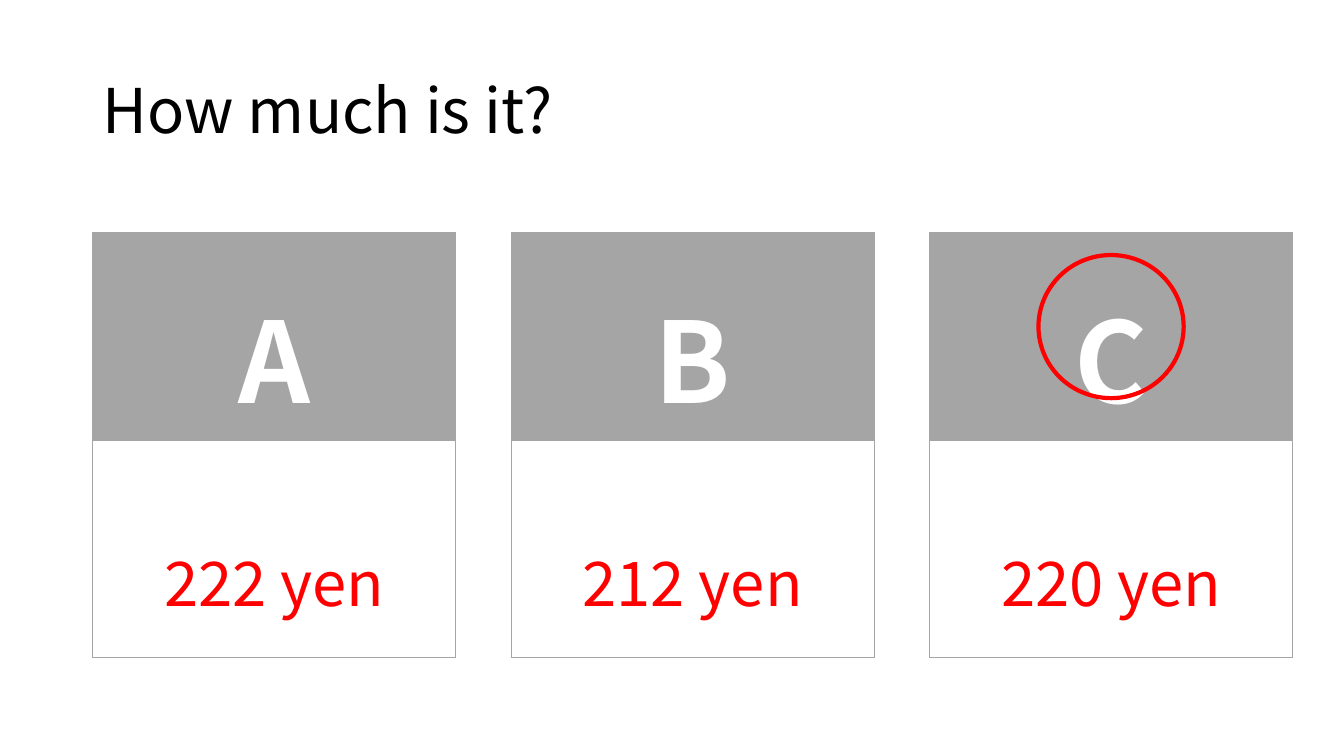
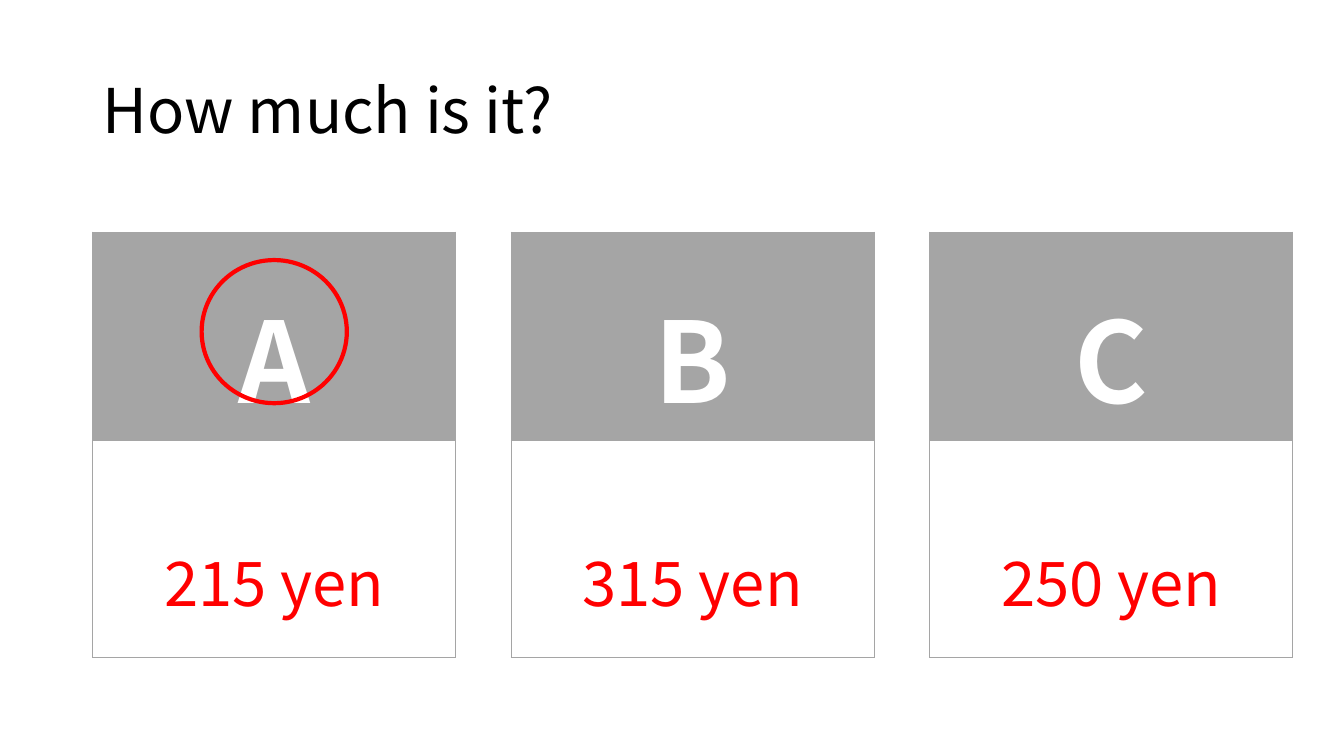
from lxml.etree import SubElement
from pptx import Presentation
from pptx.dml.color import RGBColor
from pptx.enum.shapes import MSO_SHAPE
from pptx.enum.text import MSO_ANCHOR, PP_ALIGN
from pptx.oxml.ns import qn
from pptx.util import Inches, Pt

BLACK = RGBColor(0x00, 0x00, 0x00)
WHITE = RGBColor(0xFF, 0xFF, 0xFF)
GRAY = RGBColor(0xA5, 0xA5, 0xA5)
RED = RGBColor(0xFF, 0x00, 0x00)
FONT = "Noto Sans CJK JP"

LEFT, CARD_TOP = 0.92, 2.3
CARD_W, CARD_STEP = 3.6, 4.15
HEADER_H, PRICE_H = 1.86, 2.15
RING_W, RING_H = 1.44, 1.42

# Prices, index of the ringed card, top of the ring
QUIZZES = [
    (("222 yen", "212 yen", "220 yen"), 2, 2.53),
    (("215 yen", "315 yen", "250 yen"), 0, 2.58),
]


class Deck:
    """Holds the shared style and the slide being built."""

    def __init__(self):
        self.prs = Presentation()
        self.prs.slide_width = Inches(13.33)
        self.prs.slide_height = Inches(7.5)
        self.slide = None

    def add_slide(self, title):
        self.slide = self.prs.slides.add_slide(self.prs.slide_layouts[5])
        sp = self.slide.shapes.title
        sp.left, sp.top = Inches(LEFT), Inches(0.4)
        sp.width, sp.height = Inches(11.5), Inches(1.45)
        tf = sp.text_frame
        tf.vertical_anchor = MSO_ANCHOR.MIDDLE
        p = tf.paragraphs[0]
        p.line_spacing = 0.9
        self.set_text(p, title, 44, BLACK, align=PP_ALIGN.LEFT)

    def set_text(self, p, text, size, color, bold=False, align=PP_ALIGN.CENTER):
        p.text = text
        p.alignment = align
        p.font.name = FONT
        p.font.size = Pt(size)
        p.font.bold = bold
        p.font.color.rgb = color

    def outline(self, cell):
        """Draw thin gray borders; call before the cell gets its fill."""
        tc_pr = cell._tc.get_or_add_tcPr()
        for side in ("L", "R", "T", "B"):
            ln = SubElement(tc_pr, qn(f"a:ln{side}"), w=str(Pt(0.5)))
            fill = SubElement(ln, qn("a:solidFill"))
            SubElement(fill, qn("a:srgbClr"), val=str(GRAY))

    def card(self, column, letter, price):
        frame = self.slide.shapes.add_table(
            2, 1, Inches(LEFT + column * CARD_STEP), Inches(CARD_TOP),
            Inches(CARD_W), Inches(HEADER_H + PRICE_H))
        table = frame.table
        table.first_row = table.horz_banding = False
        table.rows[0].height = Inches(HEADER_H)
        table.rows[1].height = Inches(PRICE_H)
        header, price_cell = table.cell(0, 0), table.cell(1, 0)
        for cell, margin in ((header, 0.41), (price_cell, 0.94)):
            self.outline(cell)
            cell.margin_top = Inches(margin)
        header.fill.solid()
        header.fill.fore_color.rgb = GRAY
        price_cell.fill.background()
        self.set_text(header.text_frame.paragraphs[0], letter, 80, WHITE, bold=True)
        self.set_text(price_cell.text_frame.paragraphs[0], price, 44, RED)

    def ring(self, column, top):
        """Circle the letter of one card, centred across it."""
        left = LEFT + column * CARD_STEP + (CARD_W - RING_W) / 2
        sp = self.slide.shapes.add_shape(
            MSO_SHAPE.OVAL, Inches(left), Inches(top),
            Inches(RING_W), Inches(RING_H))
        sp.shadow.inherit = False
        sp.fill.background()
        sp.line.color.rgb = RED
        sp.line.width = Pt(3)


def main():
    deck = Deck()
    for prices, answer, ring_top in QUIZZES:
        deck.add_slide("How much is it?")
        for column, (letter, price) in enumerate(zip("ABC", prices)):
            deck.card(column, letter, price)
        deck.ring(answer, ring_top)
    deck.prs.save("out.pptx")


if __name__ == "__main__":
    main()
